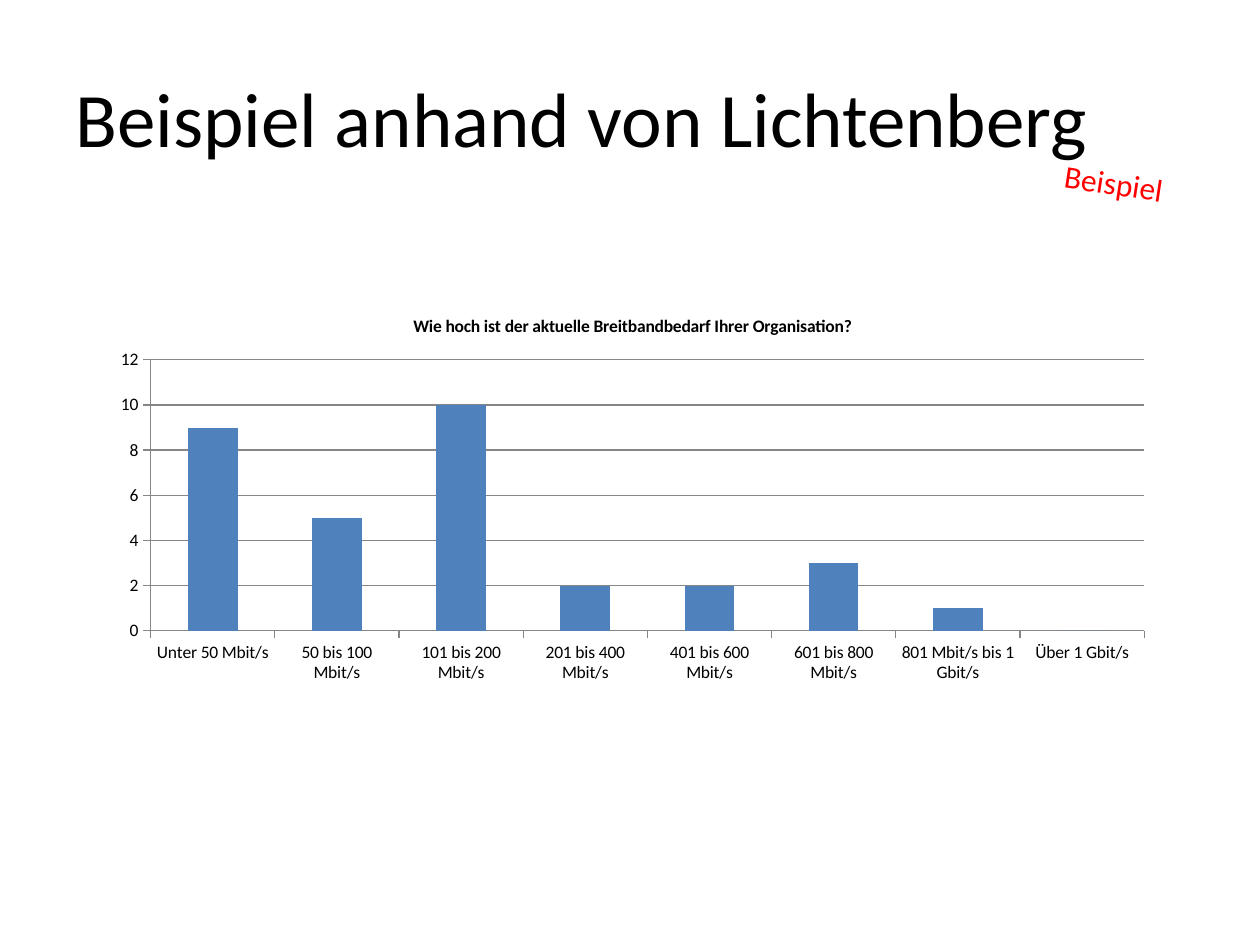
import pptx
import pptx.chart.data
import pptx.dml.color
import pptx.enum.chart
import pptx.enum.text
import pptx.util

Pt = pptx.util.Pt
FONT = "Calibri"
BANDWIDTH_NEEDS = {
    "Unter 50 Mbit/s": 9,
    "50 bis 100 Mbit/s": 5,
    "101 bis 200 Mbit/s": 10,
    "201 bis 400 Mbit/s": 2,
    "401 bis 600 Mbit/s": 2,
    "601 bis 800 Mbit/s": 3,
    "801 Mbit/s bis 1 Gbit/s": 1,
    "Über 1 Gbit/s": 0,
}


def rgb(color):
    """Return the colour object for a hex string."""
    return pptx.dml.color.RGBColor.from_string(color)


def format_font(font, size, color="000000", bold=False):
    """Set typeface, size, colour and weight of a font."""
    font.name, font.size, font.bold = FONT, Pt(size), bold
    font.color.rgb = rgb(color)


def write_text(tf, text, size, align, color="000000", bold=False):
    """Write one formatted paragraph into a text frame."""
    p = tf.paragraphs[0]
    p.alignment = align
    r = p.add_run()
    r.text = text
    format_font(r.font, size, color, bold)


def place(sp, box):
    """Move and size a shape to a box given in points."""
    sp.left, sp.top, sp.width, sp.height = (Pt(v) for v in box)


def add_title(s, box, text):
    """Fill the title placeholder."""
    sp = s.shapes.title
    place(sp, box)
    sp.text_frame.vertical_anchor = pptx.enum.text.MSO_ANCHOR.MIDDLE
    write_text(sp.text_frame, text, 44, pptx.enum.text.PP_ALIGN.LEFT)


def add_stamp(s, box, text, angle):
    """Add a tilted red label."""
    sp = s.shapes.add_textbox(*(Pt(v) for v in box))
    sp.rotation = angle
    tf = sp.text_frame
    tf.word_wrap = True
    tf.auto_size = pptx.enum.text.MSO_AUTO_SIZE.SHAPE_TO_FIT_TEXT
    write_text(tf, text, 18, pptx.enum.text.PP_ALIGN.CENTER, color="FF0000")


def add_bandwidth_chart(s, box, title, values):
    """Add a column chart of answers per bandwidth class."""
    data = pptx.chart.data.CategoryChartData()
    data.categories = list(values)
    data.add_series("Series 1", list(values.values()))
    kind = pptx.enum.chart.XL_CHART_TYPE.COLUMN_CLUSTERED
    chart = s.shapes.add_chart(kind, *(Pt(v) for v in box), data).chart
    format_font(chart.font, 10)
    chart.has_legend = False
    chart.has_title = True
    write_text(chart.chart_title.text_frame, title, 10,
               pptx.enum.text.PP_ALIGN.CENTER, bold=True)
    chart.chart_title.include_in_layout = False
    plot = chart.plots[0]
    plot.gap_width = 150
    plot.vary_by_categories = False
    fill = plot.series[0].format.fill
    fill.solid()
    fill.fore_color.rgb = rgb("4F81BD")
    for axis in (chart.category_axis, chart.value_axis):
        axis.major_tick_mark = pptx.enum.chart.XL_TICK_MARK.OUTSIDE
        axis.minor_tick_mark = pptx.enum.chart.XL_TICK_MARK.NONE
        axis.format.line.color.rgb = rgb("868686")
    axis = chart.value_axis
    axis.minimum_scale, axis.maximum_scale, axis.major_unit = 0, 12, 2
    axis.has_major_gridlines = True
    axis.major_gridlines.format.line.color.rgb = rgb("868686")


def main():
    """Build and save the slide."""
    prs = pptx.Presentation()
    prs.slide_width, prs.slide_height = Pt(720), Pt(540)
    s = prs.slides.add_slide(prs.slide_layouts[5])
    add_title(s, (36, 21.6, 648, 90), "Beispiel anhand von Lichtenberg")
    add_stamp(s, (588.24, 90, 96.48, 28.8), "Beispiel", 8.6)
    add_bandwidth_chart(
        s, (56.88, 169.92, 609.12, 224.64),
        "Wie hoch ist der aktuelle Breitbandbedarf Ihrer Organisation?",
        BANDWIDTH_NEEDS)
    prs.save("out.pptx")


if __name__ == "__main__":
    main()
